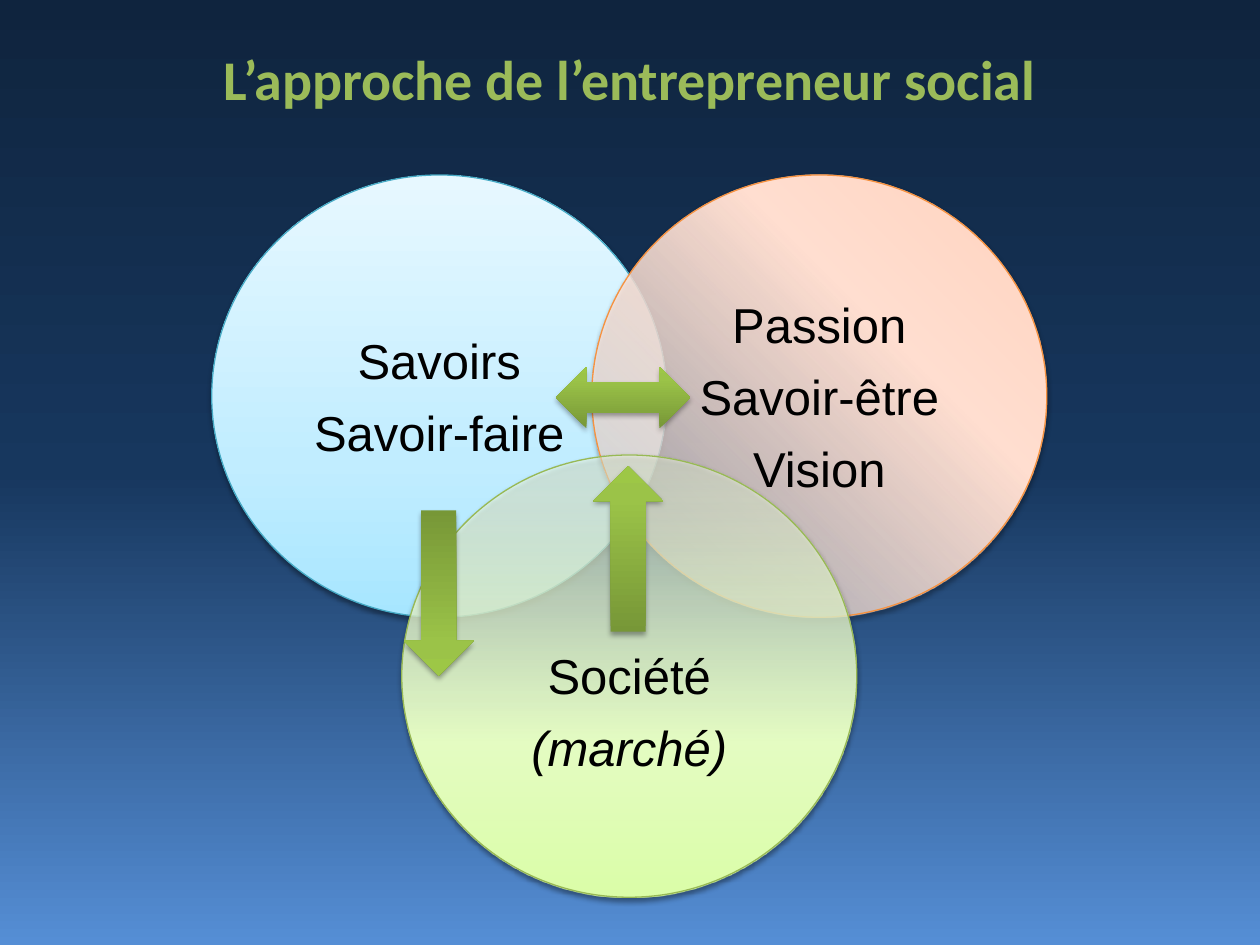
from lxml.etree import SubElement
from pptx import Presentation
from pptx.dml.color import RGBColor
from pptx.enum.shapes import MSO_SHAPE
from pptx.enum.text import MSO_ANCHOR, PP_ALIGN
from pptx.oxml.ns import qn
from pptx.util import Pt


def color(value):
    return RGBColor.from_string(value)


class Diagram:
    green = "9BBB59"
    arrow_stops = [(0, "779737", 100), (80, "9BC348", 100), (100, "9DC746", 100)]
    circle_width, circle_height = 260, 252.7
    line_gap = 7.5

    def __init__(self, slide):
        self.slide = slide

    def add_color(self, parent, value, opacity):
        tint = SubElement(parent, qn("a:srgbClr"), val=value)
        if opacity < 100:
            SubElement(tint, qn("a:alpha"), val=str(opacity * 1000))

    def gradient(self, fill, element, stops, angle):
        fill.gradient()
        fill.gradient_angle = (360 - angle) % 360
        stop_list = next(element.iter(qn("a:gsLst")))
        for default_stop in list(stop_list):
            stop_list.remove(default_stop)
        for position, value, opacity in stops:
            stop = SubElement(stop_list, qn("a:gs"), pos=str(position * 1000))
            self.add_color(stop, value, opacity)

    def shadow(self, shape, opacity, distance):
        shape.shadow.inherit = False
        effects = next(shape.element.iter(qn("a:effectLst")))
        outer = SubElement(effects, qn("a:outerShdw"), blurRad=str(Pt(3.1)),
                           dist=str(Pt(distance)), dir="5400000", rotWithShape="0")
        self.add_color(outer, "000000", opacity)

    def background(self, stops):
        self.gradient(self.slide.background.fill, self.slide.element, stops, 90)

    def run(self, paragraph, words, font_name, size, value):
        run = paragraph.add_run()
        run.text = words
        run.font.name = font_name
        run.font.size = Pt(size)
        run.font.color.rgb = color(value)
        return run

    def title(self, words):
        title = self.slide.shapes.title
        title.left, title.top, title.width, title.height = Pt(36), Pt(21.6), Pt(648), Pt(46)
        title.text_frame.vertical_anchor = MSO_ANCHOR.MIDDLE
        paragraph = title.text_frame.paragraphs[0]
        paragraph.alignment = PP_ALIGN.CENTER
        self.run(paragraph, words, "Calibri", 32, self.green).font.bold = True

    def circle(self, left, top, stops, angle, outline, lines, inset_top=3.6):
        circle = self.slide.shapes.add_shape(
            MSO_SHAPE.OVAL, Pt(left), Pt(top), Pt(self.circle_width), Pt(self.circle_height))
        self.gradient(circle.fill, circle.element, stops, angle)
        circle.line.color.rgb = color(outline)
        circle.line.width = Pt(0.75)
        self.shadow(circle, 38, 1.6)
        frame = circle.text_frame
        frame.word_wrap = True
        frame.vertical_anchor = MSO_ANCHOR.MIDDLE
        frame.margin_left = frame.margin_right = Pt(0)
        frame.margin_top, frame.margin_bottom = Pt(inset_top), Pt(3.6)
        for index, (words, italic) in enumerate(lines):
            paragraph = frame.add_paragraph() if index else frame.paragraphs[0]
            paragraph.alignment = PP_ALIGN.CENTER
            paragraph.space_after = Pt(self.line_gap)
            run = self.run(paragraph, words, "Arial", 28, "000000")
            if italic:
                run.font.italic = True

    def arrow(self, kind, left, top, width, height, rotation=0):
        arrow = self.slide.shapes.add_shape(kind, Pt(left), Pt(top), Pt(width), Pt(height))
        arrow.rotation = rotation
        self.gradient(arrow.fill, arrow.element, self.arrow_stops, 270)
        arrow.line.fill.background()
        self.shadow(arrow, 35, 1.8)


def main():
    presentation = Presentation()
    presentation.slide_width, presentation.slide_height = Pt(720), Pt(540)
    diagram = Diagram(presentation.slides.add_slide(presentation.slide_layouts[5]))
    diagram.background([(0, "0F243E", 100), (50, "17375E", 100), (100, "558ED5", 100)])
    diagram.title("L’approche de l’entrepreneur social")
    diagram.circle(121, 100, [(0, "A7E6FF", 100), (35, "C1EDFF", 100), (100, "E7F8FF", 100)],
                   270, "46AAC5", [("Savoirs", False), ("Savoir-faire", False)])
    diagram.circle(338.2, 100, [(0, "FFD2BD", 100), (35, "FFDED0", 100), (100, "FFF2ED", 49)],
                   135, "F69240",
                   [("Passion", False), ("Savoir-être", False), ("Vision", False)])
    diagram.arrow(MSO_SHAPE.LEFT_RIGHT_ARROW, 317.5, 209.5, 77, 35.3)
    diagram.circle(229.6, 260, [(0, "DAFDA7", 100), (35, "E4FCC2", 100), (100, "F5FFE7", 49)],
                   270, "98B955", [("Société", False), ("(marché)", True)], inset_top=43.3)
    diagram.arrow(MSO_SHAPE.UP_ARROW, 339, 266.4, 40, 94.5)
    diagram.arrow(MSO_SHAPE.UP_ARROW, 230.6, 291.6, 40, 94.5, rotation=180)
    presentation.save("out.pptx")


if __name__ == "__main__":
    main()
